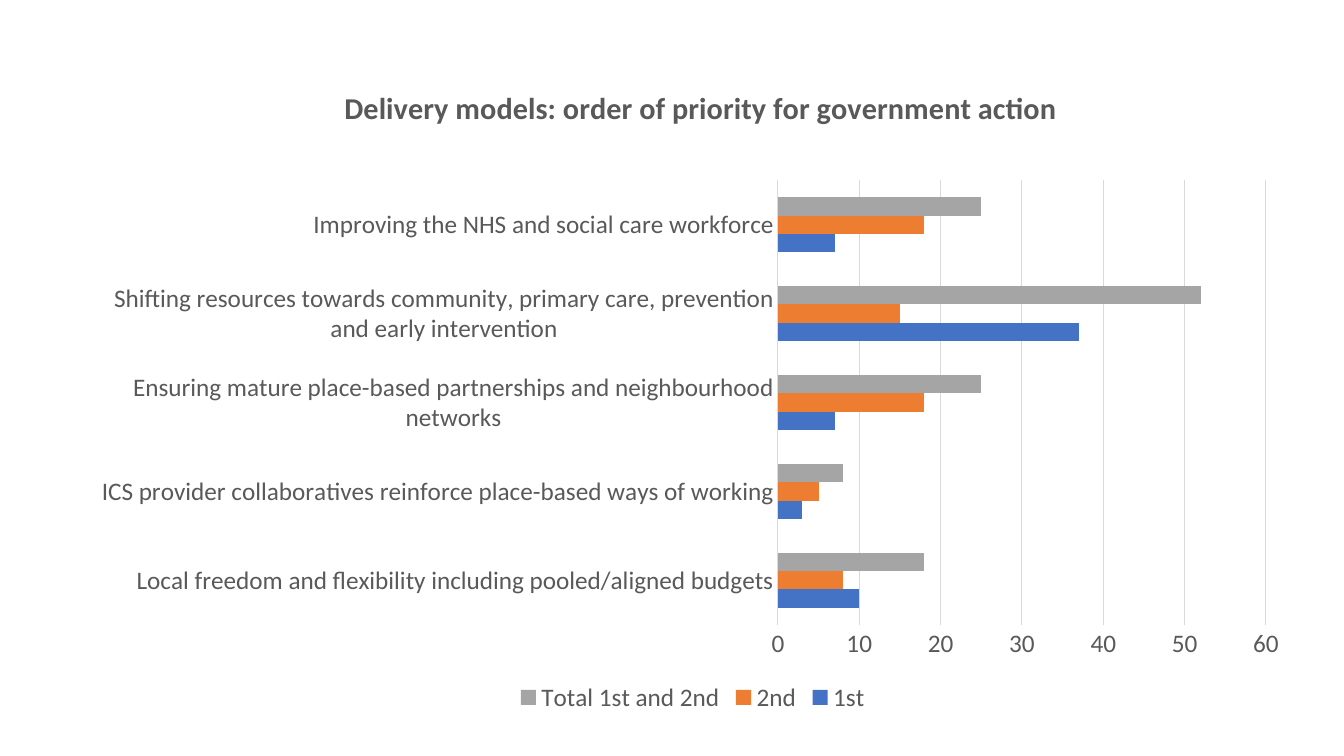
from dataclasses import dataclass
from lxml.etree import SubElement
from pptx import Presentation
from pptx.chart.data import CategoryChartData
from pptx.dml.color import RGBColor
from pptx.enum.chart import XL_CHART_TYPE, XL_LEGEND_POSITION, XL_TICK_MARK
from pptx.oxml.ns import qn
from pptx.util import Inches, Pt


@dataclass(frozen=True)
class Theme:
    """Hold the colours, font and type sizes."""
    face: str = "Calibri"
    ink: str = "595959"
    rule: str = "D9D9D9"
    fills: tuple = ("4472C4", "ED7D31", "A5A5A5")
    text: float = 18
    head: float = 21.6


def apply(item, values):
    """Set each named value on an item."""
    for name, value in values.items():
        setattr(item, name, value)


class Board:
    """Draw styled elements on the current slide."""

    def __init__(self, deck, theme):
        """Add a blank slide to the deck."""
        self.deck, self.theme = deck, theme
        self.slide = deck.slides.add_slide(deck.slide_layouts[6])

    def font(self, font, size, bold=False):
        """Style a font."""
        apply(font, dict(name=self.theme.face, size=Pt(size), bold=bold))
        font.color.rgb = RGBColor.from_string(self.theme.ink)

    def line(self, form):
        """Style a thin rule."""
        form.line.color.rgb = RGBColor.from_string(self.theme.rule)
        form.line.width = Pt(0.75)

    def place(self, layout, inner=False, **shares):
        """Fix a chart part at shares of the chart area."""
        for node in list(layout):
            layout.remove(node)
        manual = SubElement(layout, qn("c:manualLayout"))
        marks = {"layoutTarget": "inner"} if inner else {}
        marks.update(xMode="edge", yMode="edge", **shares)
        for name, value in marks.items():
            SubElement(manual, qn(f"c:{name}")).set("val", str(value))

    def bars(self, box, data):
        """Add a clustered bar chart in a box of slide shares."""
        wide, high = self.deck.slide_width, self.deck.slide_height
        left, top, width, height = (
            int(share * side) for share, side in zip(box, (wide, high) * 2))
        chart = self.slide.shapes.add_chart(
            XL_CHART_TYPE.BAR_CLUSTERED, left, top, width, height, data).chart
        self.font(chart.font, self.theme.text)
        plot = chart.plots[0]
        apply(plot, dict(gap_width=182, overlap=0, vary_by_categories=False))
        for series, fill in zip(plot.series, self.theme.fills):
            series.format.fill.solid()
            series.format.fill.fore_color.rgb = RGBColor.from_string(fill)
        return chart

    def axes(self, chart, top, step):
        """Style both axes and the grid lines."""
        cat, val = chart.category_axis, chart.value_axis
        for axis in (cat, val):
            apply(axis, dict(major_tick_mark=XL_TICK_MARK.NONE,
                             minor_tick_mark=XL_TICK_MARK.NONE))
            self.font(axis.tick_labels.font, self.theme.text)
        apply(val, dict(minimum_scale=0, maximum_scale=top, major_unit=step,
                        has_major_gridlines=True))
        self.line(cat.format)
        self.line(val.major_gridlines.format)
        val.format.line.fill.background()

    def title(self, chart, words, **shares):
        """Add a bold chart title."""
        frame = chart.chart_title.text_frame
        frame.text = words
        self.font(frame.paragraphs[0].runs[0].font, self.theme.head, True)
        title = chart.chart_title._element
        self.place(title.get_or_add_layout() if hasattr(title, "get_or_add_layout")
                   else title.find(qn("c:layout")), **shares)

    def legend(self, chart):
        """Add a legend below the plot."""
        chart.has_legend = True
        apply(chart.legend, dict(position=XL_LEGEND_POSITION.BOTTOM,
                                 include_in_layout=False))
        self.font(chart.legend.font, self.theme.text)


def main():
    """Build and save the slide."""
    deck = Presentation()
    apply(deck, dict(slide_width=Inches(13.33), slide_height=Inches(7.5)))
    board = Board(deck, Theme())
    data = CategoryChartData()
    data.categories = [
        "Local freedom and flexibility including pooled/aligned budgets",
        "ICS provider collaboratives reinforce place-based ways of working",
        "Ensuring mature place-based partnerships and neighbourhood networks",
        "Shifting resources towards community, primary care, prevention and early intervention",
        "Improving the NHS and social care workforce",
    ]
    first, second = (10, 3, 7, 37, 7), (8, 5, 18, 15, 18)
    data.add_series("1st", first)
    data.add_series("2nd", second)
    data.add_series("Total 1st and 2nd", [a + b for a, b in zip(first, second)])
    chart = board.bars((0.0615, 0.072, 0.9077, 0.8773), data)
    board.axes(chart, 60, 10)
    board.title(chart, "Delivery models: order of priority for government action",
                x=0.21, y=0.04)
    board.legend(chart)
    area = chart.plots[0]._element.getparent()
    layout = area.find(qn("c:layout"))
    if layout is None:
        layout = SubElement(area, qn("c:layout"))
        area.insert(0, layout)
    board.place(layout, inner=True, x=0.57, y=0.19, w=0.4, h=0.67)
    deck.save("out.pptx")


if __name__ == "__main__":
    main()
